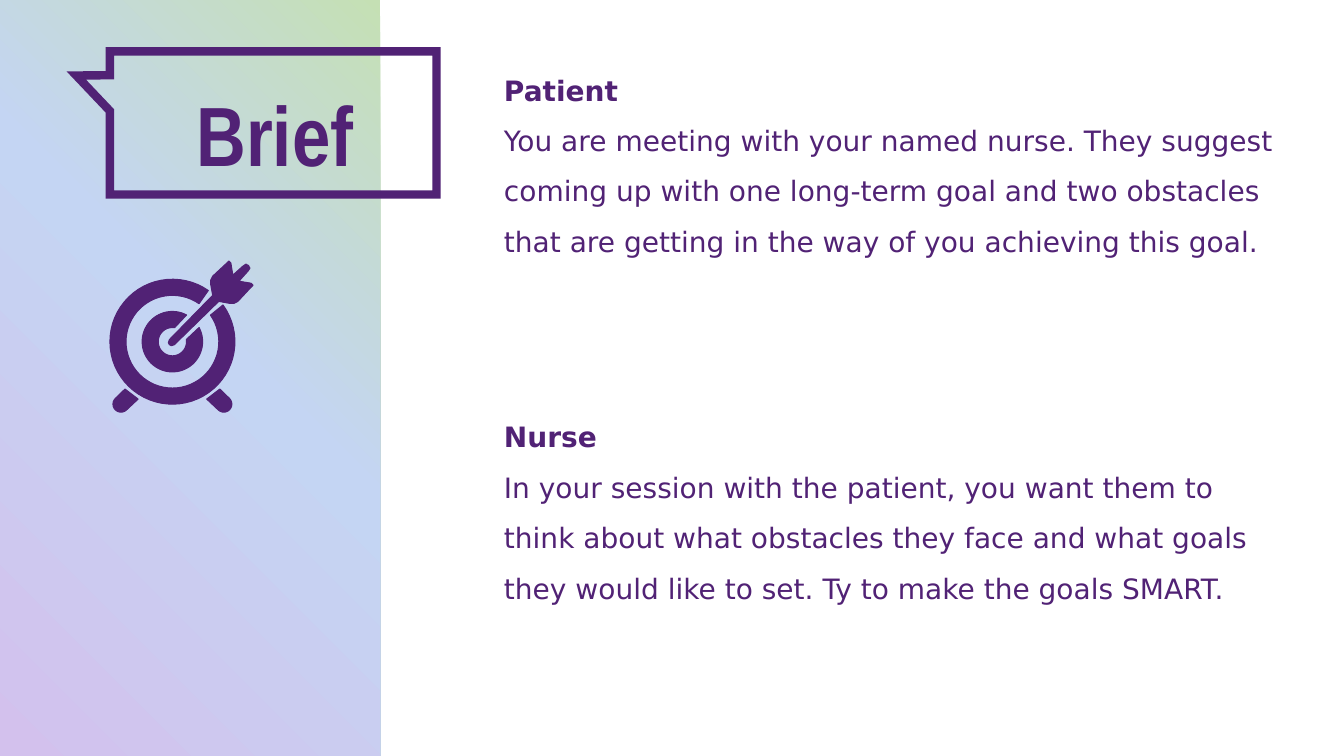
from math import cos, radians, sin

from pptx import Presentation
from pptx.dml.color import RGBColor
from pptx.enum.shapes import MSO_SHAPE as SHAPE
from pptx.enum.text import MSO_ANCHOR as ANCHOR, MSO_AUTO_SIZE as AUTOSIZE, PP_ALIGN as ALIGN
from pptx.oxml import parse_xml
from pptx.oxml.ns import nsdecls
from pptx.util import Inches, Pt

THEME = {
    "ink": RGBColor.from_string("512275"),
    "panel": [(0, "D3C1ED"), (56, "C4D5F3"), (100, "C5E0B4")],
    "title": {"name": "Arial Narrow", "size": Pt(60), "bold": True},
    "heading": {"name": "DejaVu Sans", "size": Pt(20), "bold": True},
    "body": {"name": "DejaVu Sans", "size": Pt(20), "bold": False},
    "border": Pt(6),
    "icon_line": Pt(0.75),
}

BRIEFS = [
    (6.8, "Patient",
     "You are meeting with your named nurse. They suggest coming up with one "
     "long-term goal and two obstacles that are getting in the way of you "
     "achieving this goal."),
    (52.67, "Nurse",
     "In your session with the patient, you want them to think about what "
     "obstacles they face and what goals they would like to set. Ty to make "
     "the goals SMART."),
]

prs = Presentation()
prs.slide_width, prs.slide_height = Inches(13.33), Inches(7.5)
COL, ROW = prs.slide_width / 100, prs.slide_height / 100
slide = prs.slides.add_slide(prs.slide_layouts[5])
shapes = slide.shapes


def box(left, top, width, height):
    """Turn percentages of the slide into a position and size."""
    return [round(n) for n in (left * COL, top * ROW, width * COL, height * ROW)]


def arc(cx, cy, radius, start, end, steps=60):
    """Points on a circle, in inches; angles in degrees, clockwise from the right."""
    angles = [radians(start + (end - start) * i / steps) for i in range(steps + 1)]
    return [(cx + radius * cos(a), cy + radius * sin(a)) for a in angles]


# Gradient side panel
panel = shapes.add_shape(SHAPE.RECTANGLE, *box(0, 0, 28.28, 100))
panel.shadow.inherit = False
panel.line.fill.background()
panel.fill.gradient()
stops = "".join(f'<a:gs pos="{pos * 1000}"><a:srgbClr val="{color}"/></a:gs>'
                for pos, color in THEME["panel"])
gradient = parse_xml(
    f'<a:gradFill {nsdecls("a")} rotWithShape="1"><a:gsLst>{stops}</a:gsLst>'
    '<a:path path="circle"><a:fillToRect t="100000" r="100000"/></a:path></a:gradFill>')
sp_pr = panel._element.spPr
sp_pr.replace(sp_pr.find("{*}gradFill"), gradient)

# Speech bubble
bubble = shapes.add_shape(SHAPE.RECTANGULAR_CALLOUT, *box(8.18, 6.8, 24.3, 18.93))
bubble.adjustments[0], bubble.adjustments[1] = -0.603, -0.331
bubble.shadow.inherit = False
bubble.fill.background()
bubble.line.color.rgb = THEME["ink"]
bubble.line.width = THEME["border"]
bubble.line._ln.append(parse_xml(f'<a:miter {nsdecls("a")} lim="800000"/>'))

# Title, brought in front of the panel and bubble
title = shapes.title
title.left, title.top, title.width, title.height = box(12.45, 7.6, 16.2, 17.47)
shapes._spTree.append(title._element)
tf = title.text_frame
tf.text = "Brief"
tf.vertical_anchor, tf.auto_size = ANCHOR.TOP, AUTOSIZE.SHAPE_TO_FIT_TEXT
p = tf.paragraphs[0]
p.alignment, p.line_spacing = ALIGN.LEFT, 1.2
p._p.get_or_add_pPr().set("marL", str(Inches(0.19)))
r = p.runs[0]
r.font.color.rgb = THEME["ink"]
for attr, value in THEME["title"].items():
    setattr(r.font, attr, value)

# Role briefs
for top, heading, body in BRIEFS:
    tf = shapes.add_textbox(*box(36.76, top, 59.34, 28.27)).text_frame
    tf.word_wrap, tf.auto_size = True, AUTOSIZE.SHAPE_TO_FIT_TEXT
    for p, text, style in ((tf.paragraphs[0], heading, "heading"),
                           (tf.add_paragraph(), body, "body")):
        p.line_spacing = 1.5
        r = p.add_run()
        r.text = text
        r.font.color.rgb = THEME["ink"]
        for attr, value in THEME[style].items():
            setattr(r.font, attr, value)

# Target icon: two open rings, two mirrored legs, and an arrow mirrored on its diagonal
CX, CY = 1.71, 3.39
DIAGONAL = CX + CY
outer_ring = arc(CX, CY, 0.62, -36, 305) + arc(CX, CY, 0.46, 305, -35)
inner_ring = arc(CX, CY, 0.3, -28, 298) + arc(CX, CY, 0.14, 279, -9)
left_leg = [(1.24, 3.86), *arc(1.2, 4.01, 0.08, 225, 45, 12), (1.37, 3.96)]
right_leg = [(2 * CX - x, y) for x, y in left_leg]
arrow_side = [(1.68, 3.42), (1.67, 3.4), (1.68, 3.37), (2.11, 2.93), (2.09, 2.82),
              (2.09, 2.78), (2.11, 2.74), (2.25, 2.61), (2.27, 2.59), (2.29, 2.61),
              (2.31, 2.73), (2.41, 2.64), (2.44, 2.62), (2.47, 2.64)]
arrow = arrow_side + [(DIAGONAL - y, DIAGONAL - x) for x, y in reversed(arrow_side)]

icon = shapes.add_group_shape()
for outline in (outer_ring, inner_ring, left_leg, right_leg, arrow):
    points = [(Inches(x), Inches(y)) for x, y in outline]
    builder = icon.shapes.build_freeform(*points[0])
    builder.add_line_segments(points[1:], close=True)
    sp = builder.convert_to_shape()
    sp.shadow.inherit = False
    sp.fill.solid()
    sp.fill.fore_color.rgb = sp.line.color.rgb = THEME["ink"]
    sp.line.width = THEME["icon_line"]

prs.save("out.pptx")
